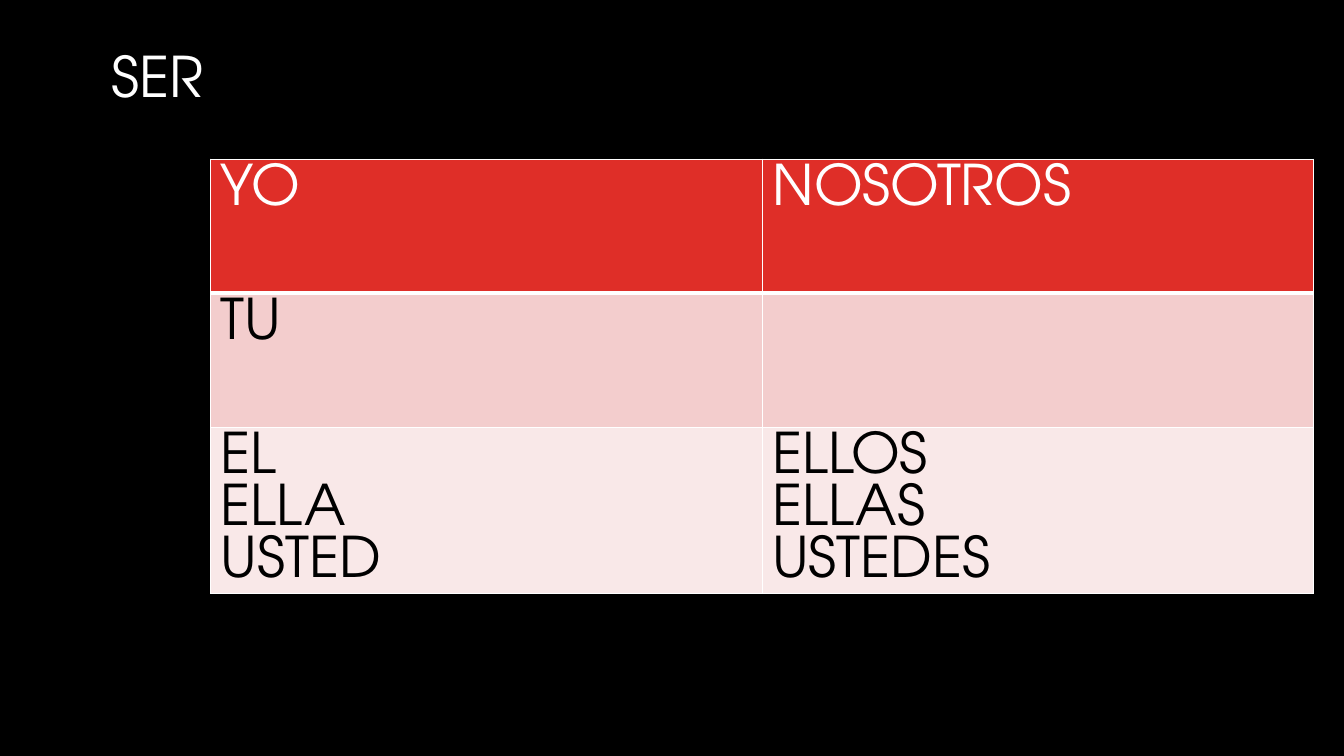
"""Build the slide of subject pronouns for the verb SER."""
from lxml import etree
from pptx import Presentation
from pptx import util as u
from pptx.dml.color import RGBColor
from pptx.enum import text
from pptx.oxml.ns import qn

TITLE = "SER"
PRONOUNS = [
    ["YO", "NOSOTROS"],
    ["TU", ""],
    ["EL\nELLA\nUSTED", "ELLOS\nELLAS\nUSTEDES"],
]
THEME = {
    "font": "TeX Gyre Adventor",
    "size": u.Pt(40),
    "background": "000000",
    "light": "FFFFFF",
    "dark": "000000",
    "rows": ["DF2E28", "F3CDCD", "F9E8E8"],
    "border": u.Pt(1),
    "header_border": u.Pt(3),
}
COLUMN_WIDTH = u.Inches(5.47)
ROW_HEIGHT = u.Inches(1.33)


def style_text(text_frame, color):
    """Give every run the theme font in one colour."""
    for paragraph in text_frame.paragraphs:
        for run in paragraph.runs:
            run.font.name = THEME["font"]
            run.font.size = THEME["size"]
            run.font.bold = False
            run.font.color.rgb = RGBColor.from_string(color)


def add_borders(cell, is_header):
    """Draw white lines on the four sides of a cell."""
    properties = cell._tc.get_or_add_tcPr()
    for index, side in enumerate(["lnL", "lnR", "lnT", "lnB"]):
        heavy = is_header and side == "lnB"
        width = THEME["header_border"] if heavy else THEME["border"]
        line = etree.Element(qn("a:" + side), w=str(int(width)))
        fill = etree.SubElement(line, qn("a:solidFill"))
        etree.SubElement(fill, qn("a:srgbClr"), val=THEME["light"])
        properties.insert(index, line)


def add_title(slide):
    """Place the right-aligned title."""
    box = slide.shapes.add_textbox(u.Inches(0.35), u.Inches(0.3), u.Inches(1.93), u.Inches(0.97))
    frame = box.text_frame
    frame.word_wrap = True
    frame.vertical_anchor = text.MSO_ANCHOR.MIDDLE
    frame.margin_right = u.Inches(0.26)
    frame.text = TITLE
    paragraph = frame.paragraphs[0]
    paragraph.alignment = text.PP_ALIGN.RIGHT
    paragraph.line_spacing = 0.9
    style_text(frame, THEME["light"])


def add_pronoun_table(slide):
    """Place the table of pronouns."""
    row_count, column_count = len(PRONOUNS), len(PRONOUNS[0])
    table = slide.shapes.add_table(
        row_count, column_count, u.Inches(2.09), u.Inches(1.58),
        COLUMN_WIDTH * column_count, ROW_HEIGHT * row_count,
    ).table
    for column in table.columns:
        column.width = COLUMN_WIDTH
    for row_index, row in enumerate(PRONOUNS):
        is_header = row_index == 0
        table.rows[row_index].height = ROW_HEIGHT
        for column_index, words in enumerate(row):
            cell = table.cell(row_index, column_index)
            cell.text_frame.text = words
            style_text(cell.text_frame, THEME["light" if is_header else "dark"])
            cell.fill.solid()
            cell.fill.fore_color.rgb = RGBColor.from_string(THEME["rows"][row_index])
            add_borders(cell, is_header)


def main():
    """Create and save the presentation."""
    presentation = Presentation()
    presentation.slide_width = u.Inches(13.33)
    presentation.slide_height = u.Inches(7.5)
    slide = presentation.slides.add_slide(presentation.slide_layouts[6])
    slide.background.fill.solid()
    slide.background.fill.fore_color.rgb = RGBColor.from_string(THEME["background"])
    add_pronoun_table(slide)
    add_title(slide)
    presentation.save("out.pptx")


if __name__ == "__main__":
    main()
